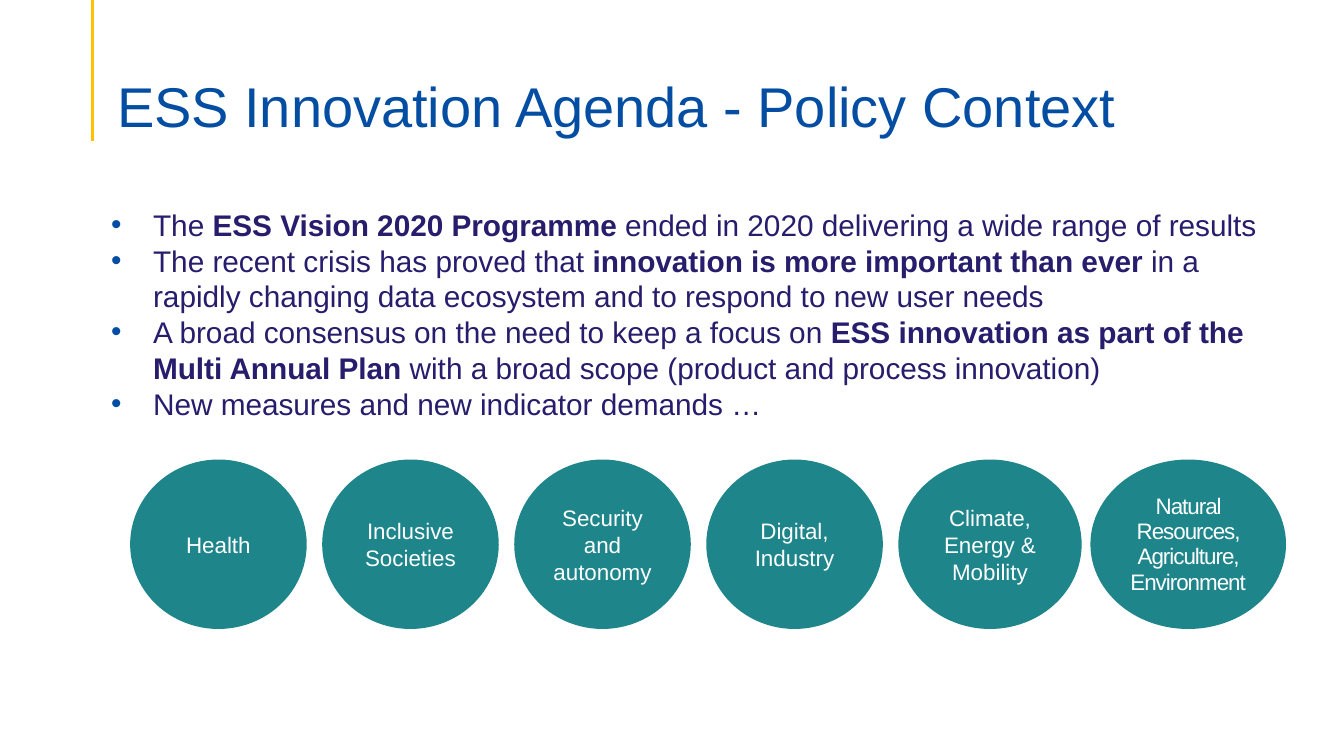
from lxml import etree
from pptx import Presentation
from pptx.dml.color import RGBColor
from pptx.enum.shapes import MSO_CONNECTOR, MSO_SHAPE
from pptx.enum.text import MSO_ANCHOR, PP_ALIGN
from pptx.oxml.ns import qn
from pptx.util import Cm, Pt

OVAL = MSO_SHAPE.OVAL
STRAIGHT = MSO_CONNECTOR.STRAIGHT
MIDDLE, BOTTOM = MSO_ANCHOR.MIDDLE, MSO_ANCHOR.BOTTOM
CENTER = PP_ALIGN.CENTER

BULLETS = [
    [("The ", False), ("ESS Vision 2020 Programme ", True),
     ("ended in 2020 delivering a wide range of results", False)],
    [("The recent crisis has proved that ", False),
     ("innovation is more important than ever ", True),
     ("in a rapidly changing data ecosystem and to respond to new user needs", False)],
    [("A broad consensus on the need to keep a focus on ", False),
     ("ESS innovation as part of the Multi Annual Plan ", True),
     ("with a broad scope (product and process innovation)", False)],
    [("New measures and new indicator demands …", False)],
]
THEMES = [
    ("Health", 4.45),
    ("Inclusive Societies", 4.45),
    ("Security and autonomy", 4.45),
    ("Digital, Industry", 4.45),
    ("Climate, Energy & Mobility", 4.62),
    ("Natural Resources, Agriculture, Environment", 4.93),
]
THEME_LEFT, THEME_PITCH = 3.28, 4.84


def rgb(value):
    return RGBColor.from_string(value)


class SlideBuilder:
    """Draws styled elements on the current slide."""

    FONT = "Arial"
    BLUE, NAVY, TEAL, GOLD, WHITE = "034EA2", "271D6C", "1E858B", "FFC000", "FFFFFF"

    def __init__(self, slide):
        self.s = slide

    def style(self, r, size, color, bold=False):
        r.font.name = self.FONT
        r.font.size = Pt(size)
        r.font.bold = bold
        r.font.color.rgb = rgb(color)

    def text_frame(self, left, top, width, height):
        box = self.s.shapes.add_textbox(Cm(left), Cm(top), Cm(width), Cm(height))
        tf = box.text_frame
        tf.word_wrap = True
        return tf

    def rule(self, x, top, bottom):
        line = self.s.shapes.add_connector(STRAIGHT, Cm(x), Cm(top), Cm(x), Cm(bottom))
        line.line.color.rgb = rgb(self.GOLD)
        line.line.width = Pt(2.25)
        etree.SubElement(line._element.spPr, qn("a:effectLst"))

    def title(self, text, left, top, width, height):
        tf = self.text_frame(left, top, width, height)
        tf.vertical_anchor = BOTTOM
        tf.margin_bottom = 0
        tf.text = text
        p = tf.paragraphs[0]
        p.line_spacing = 0.9
        self.style(p.runs[0], 40, self.BLUE)

    def bullet(self, p):
        pPr = p._p.get_or_add_pPr()
        pPr.set("marL", str(Cm(1.27)))
        pPr.set("indent", str(-Cm(1.06)))
        color = etree.SubElement(pPr, qn("a:buClr"))
        etree.SubElement(color, qn("a:srgbClr"), val=self.BLUE)
        etree.SubElement(pPr, qn("a:buFont"), typeface=self.FONT)
        etree.SubElement(pPr, qn("a:buChar"), char="•")

    def bullets(self, items, left, top, width, height):
        tf = self.text_frame(left, top, width, height)
        for i, parts in enumerate(items):
            p = tf.add_paragraph() if i else tf.paragraphs[0]
            self.bullet(p)
            for text, bold in parts:
                r = p.add_run()
                r.text = text
                self.style(r, 21.3, self.NAVY, bold)

    def circle(self, text, left, top, width, height):
        sp = self.s.shapes.add_shape(OVAL, Cm(left), Cm(top), Cm(width), Cm(height))
        sp.shadow.inherit = False
        sp.fill.solid()
        sp.fill.fore_color.rgb = rgb(self.TEAL)
        sp.line.fill.background()
        tf = sp.text_frame
        tf.word_wrap = True
        tf.vertical_anchor = MIDDLE
        tf.text = text
        p = tf.paragraphs[0]
        p.alignment = CENTER
        self.style(p.runs[0], 16, self.WHITE)
        return p

    def tighten(self, p):
        p.line_spacing = Pt(18)
        p.runs[0].font._element.set("spc", "-70")


def main():
    prs = Presentation()
    prs.slide_width, prs.slide_height = Cm(33.87), Cm(19.05)
    builder = SlideBuilder(prs.slides.add_slide(prs.slide_layouts[6]))
    builder.rule(2.34, 0, 3.56)
    builder.title("ESS Innovation Agenda - Policy Context", 2.7, 1.35, 29.2, 2.18)
    builder.bullets(BULLETS, 2.34, 5.08, 30.3, 10.8)
    for i, (text, width) in enumerate(THEMES):
        p = builder.circle(text, THEME_LEFT + i * THEME_PITCH, 11.58, width, 4.27)
    builder.tighten(p)
    prs.save("out.pptx")


if __name__ == "__main__":
    main()
